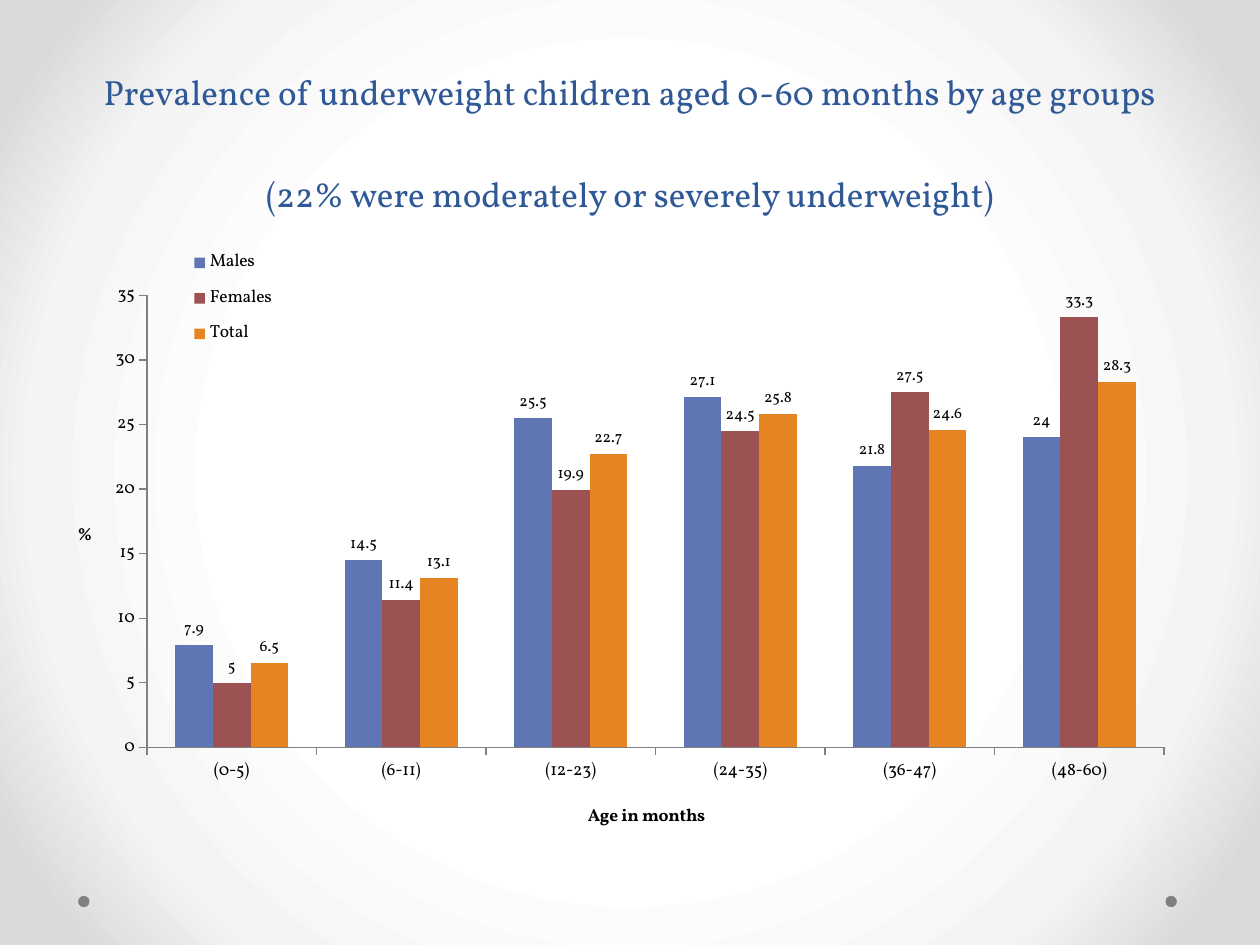
from dataclasses import dataclass

from lxml.etree import SubElement
from pptx import Presentation
from pptx.chart.data import CategoryChartData
from pptx.dml.color import RGBColor
from pptx.enum.chart import XL_CHART_TYPE, XL_LABEL_POSITION, XL_LEGEND_POSITION, XL_TICK_MARK
from pptx.enum.shapes import MSO_SHAPE
from pptx.enum.text import MSO_ANCHOR, MSO_AUTO_SIZE, PP_ALIGN
from pptx.oxml import parse_xml
from pptx.oxml.ns import nsdecls, qn
from pptx.util import Inches, Pt


@dataclass(frozen=True)
class Theme:
    """Colours, font and type sizes of the slide."""

    font: str = "Vollkorn"
    title: str = "2F5897"
    text: str = "000000"
    grey: str = "808080"
    series: tuple = ("6076B4", "9C5252", "E68422")
    backdrop: tuple = ((50, "FFFFFF"), (76, "F4F4F4"), (92, "DADADA"))
    title_size: int = 20
    chart_size: int = 10
    label_size: int = 9


AGE_GROUPS = ("(0-5)", "(6-11)", "(12-23)", "(24-35)", "(36-47)", "(48-60)")
UNDERWEIGHT = {
    "Males": (7.9, 14.5, 25.5, 27.1, 21.8, 24),
    "Females": (5, 11.4, 19.9, 24.5, 27.5, 33.3),
    "Total": (6.5, 13.1, 22.7, 25.8, 24.6, 28.3),
}


def style_font(font, theme, size, color, bold=False):
    """Apply the theme font with a size and colour."""
    font.name = theme.font
    font.size = Pt(size)
    font.bold = bold
    font.color.rgb = RGBColor.from_string(color)


def write_text(frame, text, *, theme, size, color, bold=False, spacing=None):
    """Write one centred paragraph into a text frame."""
    paragraph = frame.paragraphs[0]
    paragraph.alignment = PP_ALIGN.CENTER
    if spacing:
        paragraph.line_spacing = Pt(spacing)
    run = paragraph.add_run()
    run.text = text
    style_font(run.font, theme, size, color, bold)


def place(element, index, **position):
    """Give a chart part a fixed layout in fractions of the chart."""
    layout = element.find(qn("c:layout"))
    if layout is not None:
        element.remove(layout)
    layout = parse_xml(f"<c:layout {nsdecls('c')}/>")
    element.insert(index, layout)
    manual = SubElement(layout, qn("c:manualLayout"))
    if element.tag == qn("c:plotArea"):
        SubElement(manual, qn("c:layoutTarget"), val="inner")
    for mode in ("xMode", "yMode"):
        SubElement(manual, qn(f"c:{mode}"), val="edge")
    for name, value in position.items():
        SubElement(manual, qn(f"c:{name}"), val=str(value))


class SlideBuilder:
    """Hold the theme and the current slide."""

    def __init__(self, presentation, theme):
        """Start a slide with only a title."""
        self.theme = theme
        self.slide = presentation.slides.add_slide(presentation.slide_layouts[5])

    def background(self):
        """Fill the background with a circular gradient."""
        fill = self.slide.background.fill
        fill.solid()
        properties = self.slide.element.find(".//" + qn("p:bgPr"))
        stops = "".join(
            f'<a:gs pos="{position * 1000}"><a:srgbClr val="{color}"/></a:gs>'
            for position, color in self.theme.backdrop
        )
        gradient = parse_xml(
            f'<a:gradFill {nsdecls("a")} rotWithShape="1"><a:gsLst>{stops}</a:gsLst>'
            '<a:path path="circle"><a:fillToRect l="50000" t="50000" r="50000" b="50000"/>'
            "</a:path></a:gradFill>"
        )
        properties.replace(properties[0], gradient)

    def dot(self, left, top, size):
        """Add a small grey dot."""
        shape = self.slide.shapes.add_shape(
            MSO_SHAPE.OVAL, Inches(left), Inches(top), Inches(size), Inches(size)
        )
        shape.shadow.inherit = False
        shape.fill.solid()
        shape.fill.fore_color.rgb = RGBColor.from_string(self.theme.grey)
        shape.line.fill.background()

    def title(self, text, left, top, width, height):
        """Move and fill the title placeholder."""
        shape = self.slide.shapes.title
        shape.left, shape.top = Inches(left), Inches(top)
        shape.width, shape.height = Inches(width), Inches(height)
        frame = shape.text_frame
        frame.word_wrap = True
        frame.auto_size = MSO_AUTO_SIZE.NONE
        frame.vertical_anchor = MSO_ANCHOR.BOTTOM
        theme = self.theme
        write_text(frame, text, theme=theme, size=theme.title_size, color=theme.title, spacing=58)

    def axis(self, axis, title, x, y):
        """Style an axis and place its horizontal title."""
        theme = self.theme
        axis.has_major_gridlines = False
        axis.major_tick_mark = XL_TICK_MARK.OUTSIDE
        axis.minor_tick_mark = XL_TICK_MARK.NONE
        axis.format.line.color.rgb = RGBColor.from_string(theme.grey)
        axis.format.line.width = Pt(0.75)
        style_font(axis.tick_labels.font, theme, theme.chart_size, theme.text)
        write_text(axis.axis_title.text_frame, title, theme=theme,
                   size=theme.chart_size, color=theme.text, bold=True)
        element = axis.axis_title.element
        body = element.find(".//" + qn("a:bodyPr"))
        body.set("rot", "0")
        body.set("vert", "horz")
        place(element, 1, x=x, y=y)

    def column_chart(self, categories, series, left, top, width, height):
        """Add the clustered columns with value labels."""
        theme = self.theme
        data = CategoryChartData()
        data.categories = categories
        for name, values in series.items():
            data.add_series(name, values)
        chart = self.slide.shapes.add_chart(
            XL_CHART_TYPE.COLUMN_CLUSTERED,
            Inches(left), Inches(top), Inches(width), Inches(height), data,
        ).chart
        chart.has_title = False
        style_font(chart.font, theme, theme.chart_size, theme.text)
        plot = chart.plots[0]
        plot.gap_width = 150
        plot.overlap = 0
        plot.vary_by_categories = False
        for columns, color in zip(plot.series, theme.series):
            columns.format.fill.solid()
            columns.format.fill.fore_color.rgb = RGBColor.from_string(color)
            labels = columns.data_labels
            labels.show_value = True
            labels.position = XL_LABEL_POSITION.OUTSIDE_END
            style_font(labels.font, theme, theme.label_size, theme.text)
        self.axis(chart.category_axis, "Age in months", 0.46, 0.93)
        self.axis(chart.value_axis, "%", 0.01, 0.48)
        chart.value_axis.minimum_scale = 0
        chart.value_axis.maximum_scale = 35
        chart.value_axis.major_unit = 5
        chart.has_legend = True
        chart.legend.position = XL_LEGEND_POSITION.RIGHT
        chart.legend.include_in_layout = False
        style_font(chart.legend.font, theme, theme.chart_size, theme.text)
        place(chart.element.find(".//" + qn("c:plotArea")), 0, x=0.074, y=0.12, w=0.897, h=0.725)
        place(chart.element.find(".//" + qn("c:legend")), 1, x=0.09, y=0.03, w=0.12, h=0.19)


def main():
    """Build and save the slide."""
    presentation = Presentation()
    presentation.slide_width = Inches(10)
    presentation.slide_height = Inches(7.5)
    builder = SlideBuilder(presentation, Theme())
    builder.background()
    for left in (9.25, 0.62):
        builder.dot(left, 7.11, 0.09)
    builder.title(
        "Prevalence of underweight children aged 0-60 months by age groups "
        "(22% were moderately or severely underweight)",
        0.5, 0, 9, 1.75,
    )
    builder.column_chart(AGE_GROUPS, UNDERWEIGHT, 0.5, 1.75, 9, 4.95)
    presentation.save("out.pptx")


if __name__ == "__main__":
    main()
